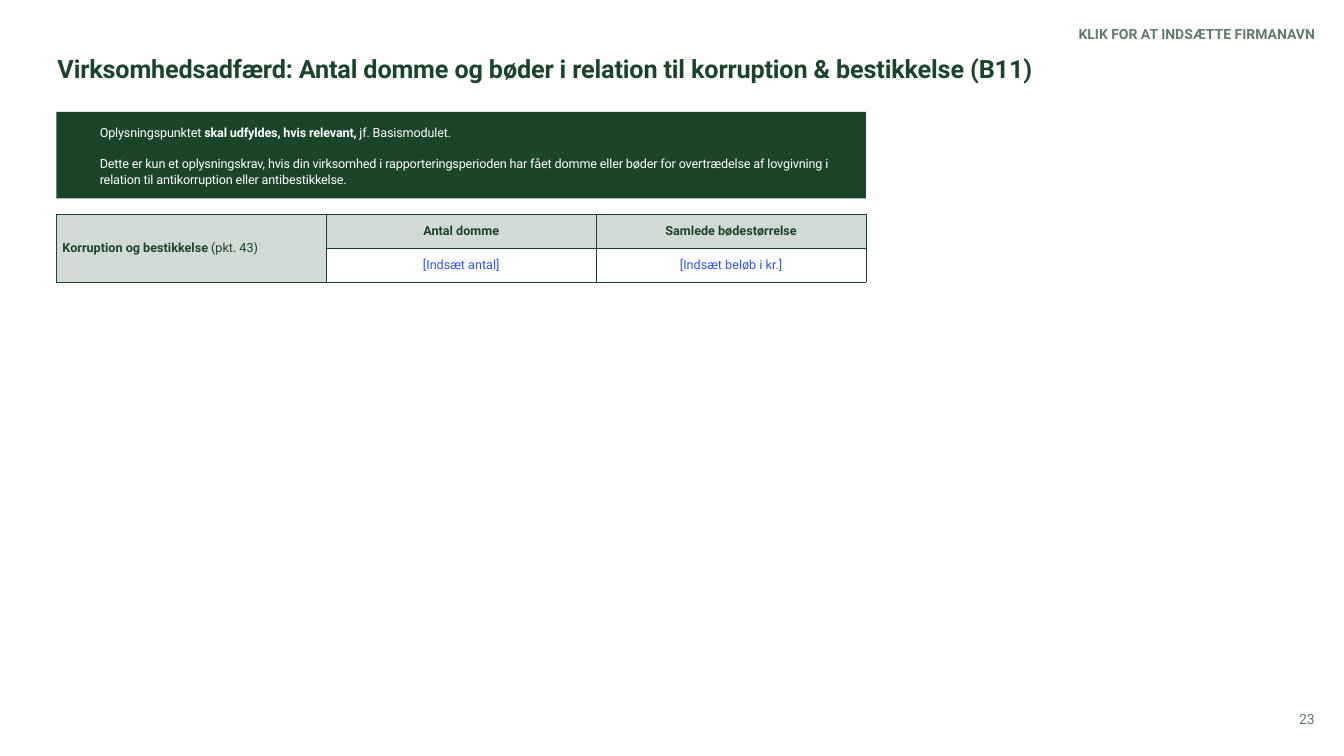
from lxml import etree
from pptx import Presentation
from pptx.dml.color import RGBColor
from pptx.enum.shapes import MSO_SHAPE
from pptx.enum.text import MSO_ANCHOR, PP_ALIGN
from pptx.oxml.ns import qn
from pptx.util import Pt

LEFT, CENTER, RIGHT = PP_ALIGN.LEFT, PP_ALIGN.CENTER, PP_ALIGN.RIGHT
TOP, MIDDLE = MSO_ANCHOR.TOP, MSO_ANCHOR.MIDDLE
PX = 9144  # EMU per px, 100 px to the inch
FONT = "Roboto"
COLORS = {"green": "1B4528", "sage": "5F7D69", "pale": "D1DAD4",
          "blue": "2D55FF", "white": "FFFFFF"}

# A paragraph is a list of (text, bold) runs
TITLE = [[("Virksomhedsadfærd: Antal domme og bøder i relation til "
           "korruption & bestikkelse (B11)", True)]]
COMPANY = [[("KLIK FOR AT INDSÆTTE FIRMANAVN", True)]]
PAGE = [[("23", False)]]
NOTE = [
    [("Oplysningspunktet ", False), ("skal udfyldes, hvis relevant, ", True),
     ("jf. Basismodulet.", False)],
    [("Dette er kun et oplysningskrav, hvis din virksomhed i rapporteringsperioden "
      "har fået domme eller bøder for overtrædelse af lovgivning i relation til "
      "antikorruption eller antibestikkelse.", False)],
]
ROW_LABEL = [("Korruption og bestikkelse ", True), ("(pkt. 43)", False)]
COLUMNS = [("Antal domme", "[Indsæt antal]"),
           ("Samlede bødestørrelse", "[Indsæt beløb i kr.]")]

TITLE_BOX = (57, 56, 1221, 27)
NOTE_BOX = (56, 111, 803, 86)
TABLE_BOX = (56, 213, 803, 67)
COMPANY_BOX = (906, 25, 398, 17)
PAGE_BOX = (1004, 705, 300, 17)


def emu(box):
    return [v * PX for v in box]


def rgb(name):
    return RGBColor.from_string(COLORS[name])


def write(tf, paragraphs, size=9, color="green", align=LEFT, line=1.0,
          gap=0, tracking=0, alpha=None):
    """Fill a text frame; gap is the space in points between paragraphs."""
    for i, runs in enumerate(paragraphs):
        p = tf.add_paragraph() if i else tf.paragraphs[0]
        p.alignment, p.line_spacing = align, line
        p.space_before = Pt(gap if i else 0)
        for text, bold in runs:
            r = p.add_run()
            r.text = text
            r.font.name, r.font.size, r.font.bold = FONT, Pt(size), bold
            r.font.color.rgb = rgb(color)
            if tracking:
                r.font._element.set("spc", str(tracking))
            if alpha:
                clr = r.font._element.find(".//" + qn("a:srgbClr"))
                etree.SubElement(clr, qn("a:alpha")).set("val", str(alpha * 1000))


def frame(sp, insets=(0, 0, 0, 0), anchor=TOP):
    tf = sp.text_frame
    tf.word_wrap, tf.vertical_anchor = True, anchor
    tf.margin_left, tf.margin_top, tf.margin_right, tf.margin_bottom = emu(insets)
    return tf


def add_label(s, box, paragraphs, **fmt):
    write(frame(s.shapes.add_textbox(*emu(box))), paragraphs,
          size=10, align=RIGHT, **fmt)


def style_cell(cell, fill):
    cell.vertical_anchor = MIDDLE
    cell.margin_left = cell.margin_right = 6 * PX
    cell.margin_top = cell.margin_bottom = 4 * PX
    cell.fill.solid()
    cell.fill.fore_color.rgb = rgb(fill)
    tcPr = cell._tc.get_or_add_tcPr()
    for i, side in enumerate(("lnL", "lnR", "lnT", "lnB")):
        ln = etree.Element(qn("a:" + side), w=str(Pt(0.5)))
        solid = etree.SubElement(ln, qn("a:solidFill"))
        etree.SubElement(solid, qn("a:srgbClr"), val=COLORS["green"])
        tcPr.insert(i, ln)


def add_figures(s):
    x, y, w, h = emu(TABLE_BOX)
    table = s.shapes.add_table(2, 1 + len(COLUMNS), x, y, w, h).table
    table.first_row = table.horz_banding = False
    for col in table.columns:
        col.width = w // len(table.columns)
    for row in table.rows:
        row.height = h // len(table.rows)
    table.cell(0, 0).merge(table.cell(1, 0))
    for row in range(2):
        style_cell(table.cell(row, 0), "pale")
    write(table.cell(0, 0).text_frame, [ROW_LABEL])
    for c, (heading, value) in enumerate(COLUMNS, 1):
        for row, text, fill, color in ((0, heading, "pale", "green"),
                                       (1, value, "white", "blue")):
            cell = table.cell(row, c)
            style_cell(cell, fill)
            write(cell.text_frame, [[(text, row == 0)]], color=color, align=CENTER)


def main():
    prs = Presentation()
    prs.slide_width, prs.slide_height = emu((1333, 750))
    s = prs.slides.add_slide(prs.slide_layouts[5])

    title = s.shapes.title
    title.left, title.top, title.width, title.height = emu(TITLE_BOX)
    write(frame(title), TITLE, size=18, line=0.9, tracking=-10)

    note = s.shapes.add_shape(MSO_SHAPE.RECTANGLE, *emu(NOTE_BOX))
    note.shadow.inherit = False
    note.fill.solid()
    note.fill.fore_color.rgb = rgb("green")
    note.line.fill.background()
    write(frame(note, (43, 12, 16, 16)), NOTE, color="white",
          line=1.06, gap=11, tracking=-10)

    add_figures(s)
    add_label(s, PAGE_BOX, PAGE, alpha=70)
    add_label(s, COMPANY_BOX, COMPANY, color="sage")
    prs.save("out.pptx")


if __name__ == "__main__":
    main()
